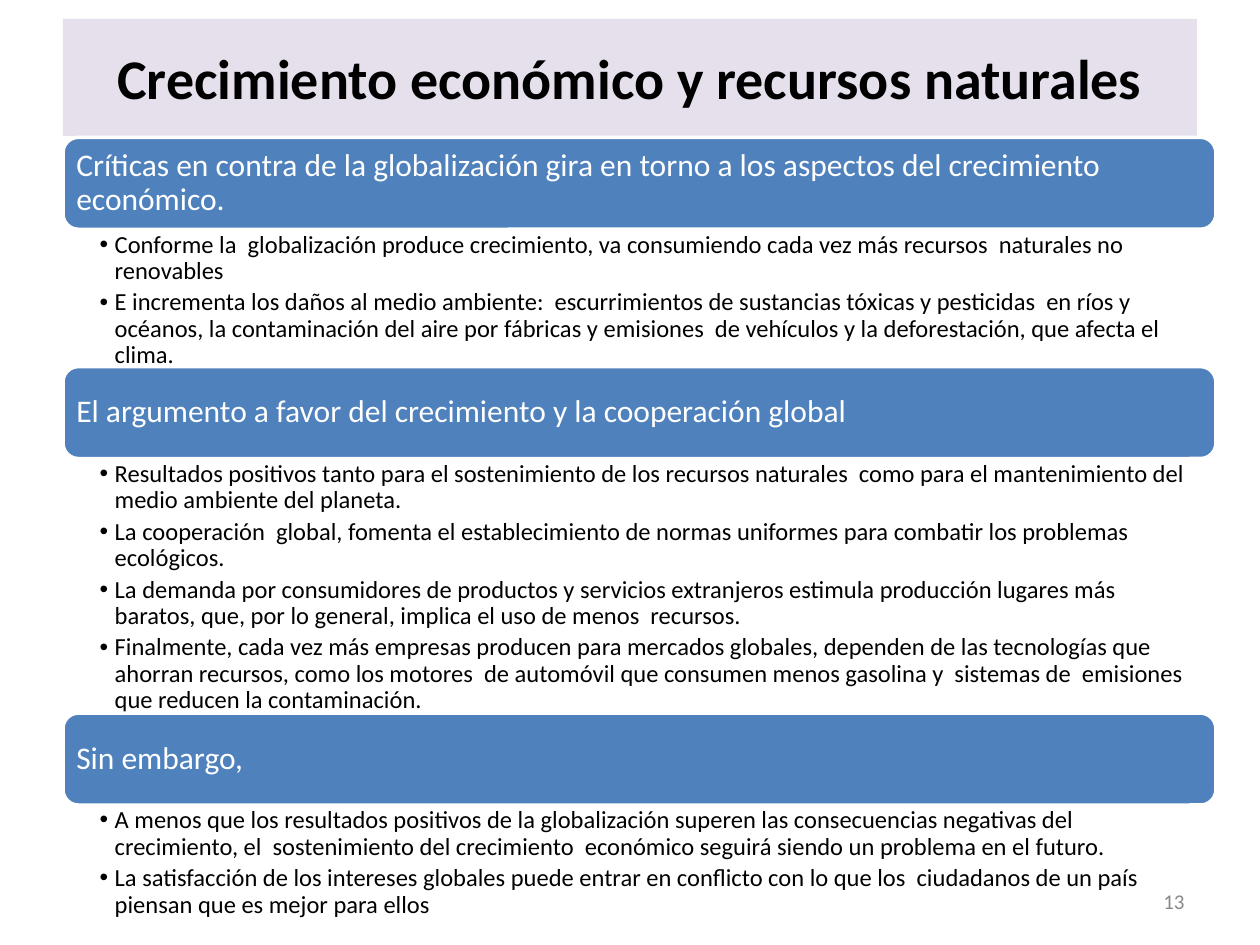
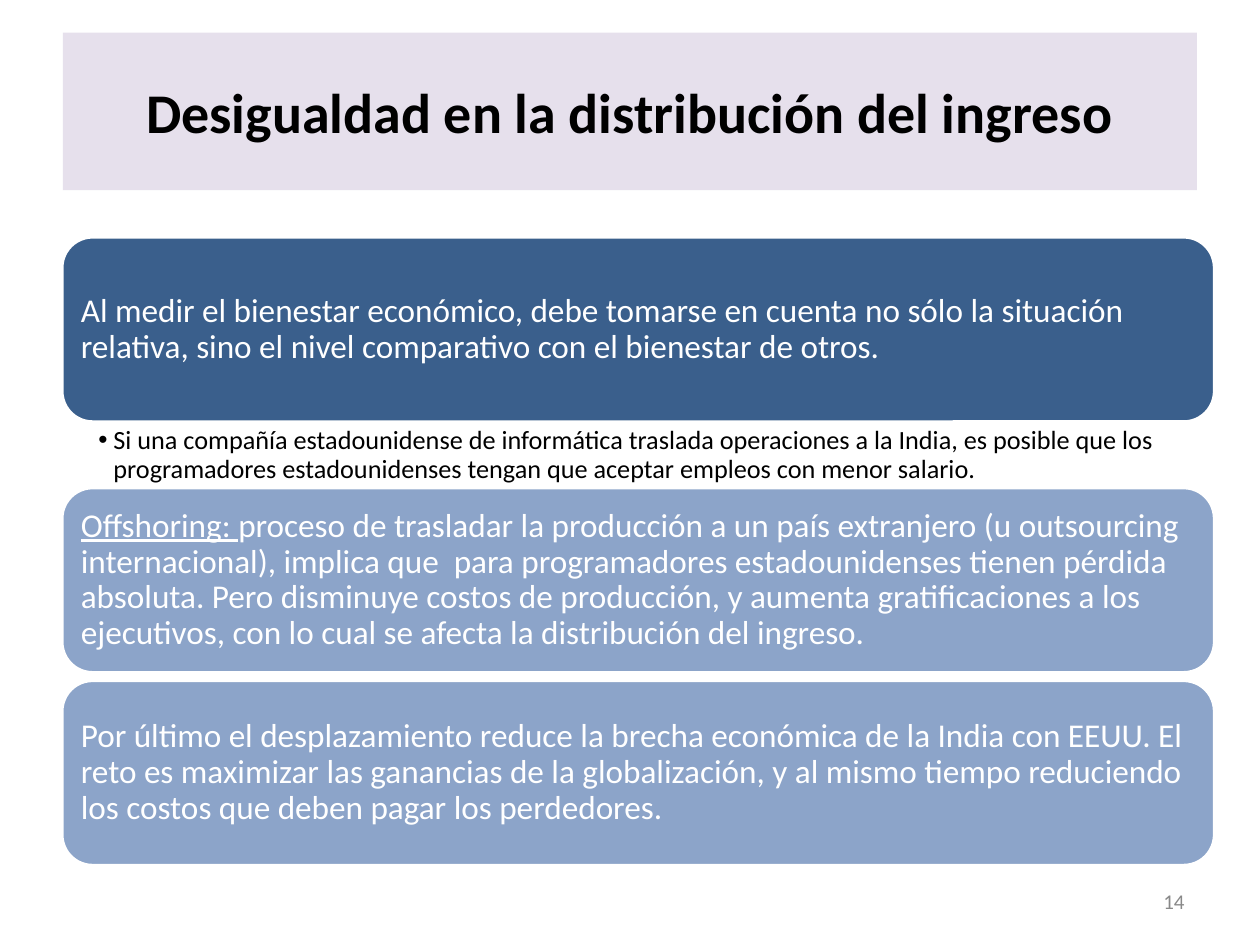
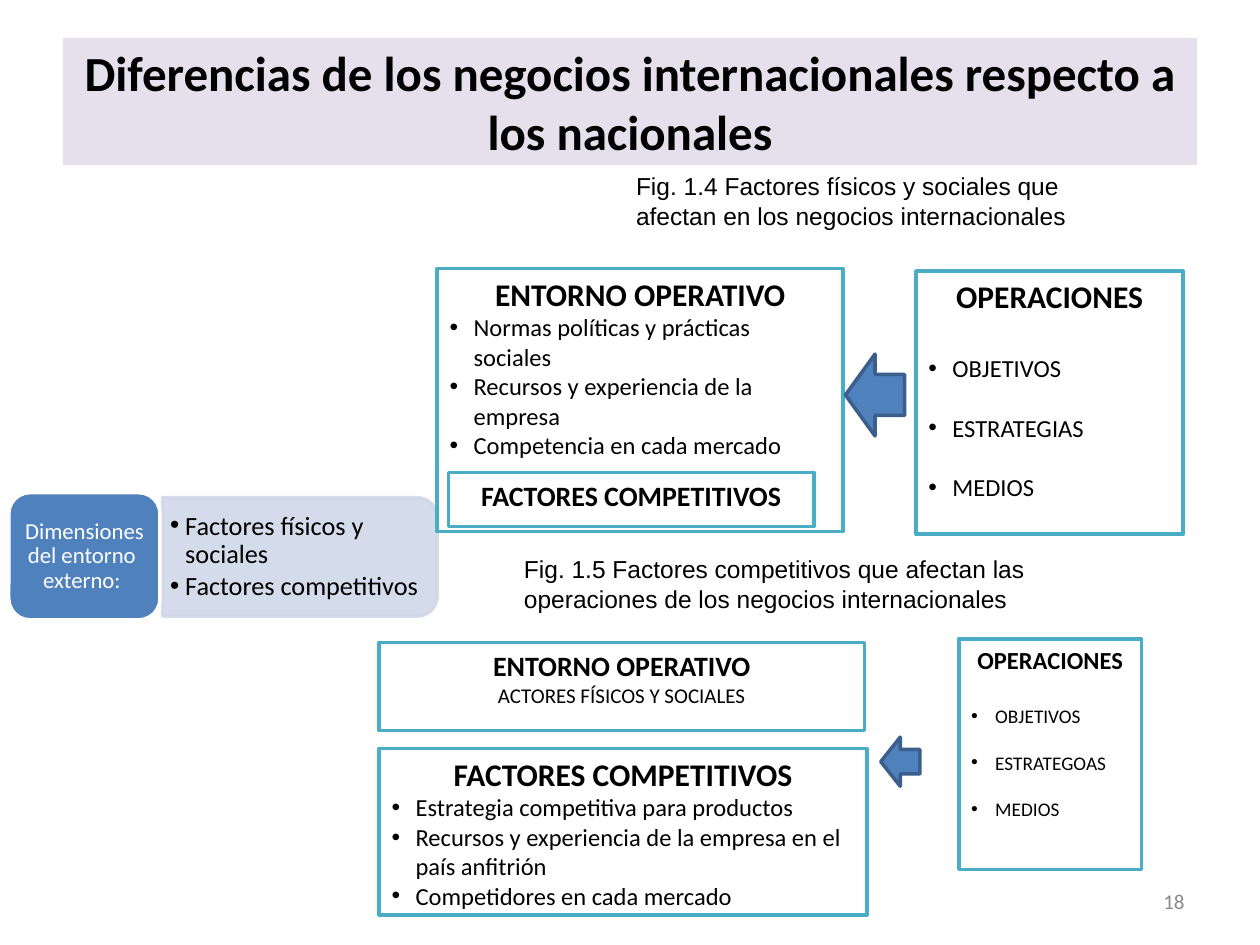
from dataclasses import dataclass, replace
from math import cos, pi, sin

from lxml.etree import SubElement
from pptx import Presentation
from pptx.dml.color import RGBColor
from pptx.enum.shapes import MSO_SHAPE as Shape
from pptx.enum.text import MSO_ANCHOR as Anchor, PP_ALIGN as Align
from pptx.oxml.ns import qn
from pptx.util import Inches, Pt

BLACK, WHITE, GREY = "000000", "FFFFFF", "898989"
LILAC, BLUE, DARK_BLUE = "E6E0EC", "4F81BD", "3A5F8C"
SOFT_BLUE, PALE_BLUE, TEAL = "8CA4C9", "D0D8E8", "4BACC6"
DEFAULT_INSETS = (0.1, 0.05, 0.1, 0.05)
LINE_HEIGHT = 1.22


def rgb(color):
    return RGBColor.from_string(color)


@dataclass
class TextStyle:
    size: float
    color: str = BLACK
    font: str = "Calibri"
    bold: bool = False
    align: Align = Align.LEFT
    indent: float = 0
    spacing: float = 1
    before: float = 0
    after: float = 0


def band_text(size):
    return TextStyle(size, WHITE, spacing=0.9)


def body_text(size, after=0.2):
    return TextStyle(size, indent=0.12, spacing=0.9, after=size * after)


def heading(size):
    return TextStyle(size, bold=True, align=Align.CENTER)


def bullet(size, before=0):
    return TextStyle(size, indent=0.19, before=before)


def hang_bullet(paragraph, indent):
    properties = paragraph._p.get_or_add_pPr()
    properties.set("marL", str(Inches(indent)))
    properties.set("indent", str(-Inches(indent)))
    SubElement(properties, qn("a:buFont"), typeface="Arial")
    SubElement(properties, qn("a:buChar"), char="•")


class Deck:
    """Holds the shared style and the slide being filled."""

    def __init__(self):
        self.presentation = Presentation()
        self.presentation.slide_width = Inches(10)
        self.presentation.slide_height = Inches(7.5)
        self.slide = None

    def start_slide(self, title, number, top, height, size=32):
        self.slide = self.presentation.slides.add_slide(self.presentation.slide_layouts[6])
        banner = self.shape(Shape.RECTANGLE, (0.5, top, 9, height), LILAC)
        self.set_text(banner, [(title, heading(size))], Anchor.MIDDLE)
        self.text_box((7.17, 6.95, 2.33, 0.4),
                      [(number, TextStyle(12, GREY, align=Align.RIGHT))], Anchor.MIDDLE)

    def paint(self, shape, fill=None, line=None):
        shape.shadow.inherit = False
        if fill:
            shape.fill.solid()
            shape.fill.fore_color.rgb = rgb(fill)
        else:
            shape.fill.background()
        if line:
            shape.line.color.rgb = rgb(line)
            shape.line.width = Pt(2)
        else:
            shape.line.fill.background()

    def shape(self, kind, box, fill=None, line=None):
        shape = self.slide.shapes.add_shape(kind, *map(Inches, box))
        self.paint(shape, fill, line)
        return shape

    def set_text(self, shape, lines, anchor=Anchor.TOP, insets=DEFAULT_INSETS, lead=""):
        """Fill in (text, style) pairs; lead is underlined before the first text."""
        frame = shape.text_frame
        frame.word_wrap = True
        frame.vertical_anchor = anchor
        (frame.margin_left, frame.margin_top,
         frame.margin_right, frame.margin_bottom) = map(Inches, insets)
        for index, (text, style) in enumerate(lines):
            paragraph = frame.add_paragraph() if index else frame.paragraphs[0]
            if lead and not index:
                paragraph.text = lead
                paragraph.runs[0].font.underline = True
                paragraph.add_run().text = text
            else:
                paragraph.text = text
            paragraph.alignment = style.align
            paragraph.line_spacing = style.spacing
            paragraph.space_before = Pt(style.before)
            paragraph.space_after = Pt(style.after)
            if style.indent:
                hang_bullet(paragraph, style.indent)
            for run in paragraph.runs:
                run.font.name = style.font
                run.font.size = Pt(style.size)
                run.font.bold = style.bold
                run.font.color.rgb = rgb(style.color)

    def text_box(self, box, lines, anchor=Anchor.TOP, insets=DEFAULT_INSETS):
        self.set_text(self.slide.shapes.add_textbox(*map(Inches, box)), lines, anchor, insets)

    def band(self, box, text, style, inset, fill=BLUE, lead=""):
        band = self.shape(Shape.ROUNDED_RECTANGLE, box, fill, WHITE)
        self.set_text(band, [(text, style)], Anchor.MIDDLE, (inset,) * 4, lead)

    def frame(self, box, lines):
        self.set_text(self.shape(Shape.RECTANGLE, box, line=TEAL), lines)

    def arrow(self, box):
        self.shape(Shape.LEFT_ARROW, box, BLUE, DARK_BLUE)

    def tab(self, box, radius, lines):
        """Draw a translucent panel whose right corners alone are rounded."""
        left, top, width, height = box
        right, bottom = left + width, top + height
        angles = [pi / 2 * step / 12 for step in range(13)]
        upper = [(right - radius + radius * sin(a), top + radius - radius * cos(a)) for a in angles]
        lower = [(x, top + bottom - y) for x, y in reversed(upper)]
        points = [(Inches(x), Inches(y)) for x, y in upper + lower + [(left, bottom)]]
        builder = self.slide.shapes.build_freeform(Inches(left), Inches(top))
        builder.add_line_segments(points, close=True)
        panel = builder.convert_to_shape()
        self.paint(panel, PALE_BLUE, PALE_BLUE)
        for color in panel._element.spPr.iter(qn("a:srgbClr")):
            SubElement(color, qn("a:alpha"), val="90000")
        self.set_text(panel, lines, Anchor.MIDDLE, (0.06, 0.08, 0.11, 0.08))


def growth_slide(deck):
    deck.start_slide("Crecimiento económico y recursos naturales", "13", 0.15, 0.93)
    sections = [
        (1.09, 1.09,
         "Críticas en contra de la globalización gira en torno a los aspectos del crecimiento económico.",
         ["Conforme la  globalización produce crecimiento, va consumiendo cada vez más recursos  "
          "naturales no renovables",
          "E incrementa los daños al medio ambiente:  escurrimientos de sustancias tóxicas y "
          "pesticidas  en ríos y océanos, la contaminación del aire por fábricas y emisiones  de "
          "vehículos y la deforestación, que afecta el clima."]),
        (2.91, 2, "El argumento a favor del crecimiento y la cooperación global",
         ["Resultados positivos tanto para el sostenimiento de los recursos naturales  como para "
          "el mantenimiento del medio ambiente del planeta.",
          "La cooperación  global, fomenta el establecimiento de normas uniformes para combatir "
          "los problemas ecológicos.",
          "La demanda por consumidores de productos y servicios extranjeros estimula producción "
          "lugares más baratos, que, por lo general, implica el uso de menos  recursos.",
          "Finalmente, cada vez más empresas producen para mercados globales, dependen de las "
          "tecnologías que ahorran recursos, como los motores  de automóvil que consumen menos "
          "gasolina y  sistemas de  emisiones que reducen la contaminación."]),
        (5.66, 0.89, "Sin embargo,",
         ["A menos que los resultados positivos de la globalización superen las consecuencias "
          "negativas del crecimiento, el  sostenimiento del crecimiento  económico seguirá siendo "
          "un problema en el futuro.",
          "La satisfacción de los intereses globales puede entrar en conflicto con lo que los  "
          "ciudadanos de un país piensan que es mejor para ellos"]),
    ]
    band_height = 0.73
    for top, body_height, claim, details in sections:
        deck.band((0.5, top, 9.15, band_height), claim, band_text(18), 0.07)
        deck.text_box((0.5, top + band_height, 9.15, body_height),
                      [(detail, body_text(14)) for detail in details],
                      insets=(0.29, 0.02, 0.11, 0.02))


def inequality_slide(deck):
    deck.start_slide("Desigualdad en la distribución del ingreso", "14", 0.26, 1.25)
    bands = [
        (1.88, DARK_BLUE, "",
         "Al medir el bienestar económico, debe tomarse en cuenta no sólo la situación relativa, "
         "sino el nivel comparativo con el bienestar de otros."),
        (3.87, SOFT_BLUE, "Offshoring: ",
         "proceso de trasladar la producción a un país extranjero (u outsourcing internacional), "
         "implica que  para programadores estadounidenses tienen pérdida absoluta. Pero disminuye "
         "costos de producción, y aumenta gratificaciones a los ejecutivos, con lo cual se afecta "
         "la distribución del ingreso."),
        (5.4, SOFT_BLUE, "",
         "Por último el desplazamiento reduce la brecha económica de la India con EEUU. El reto es "
         "maximizar las ganancias de la globalización, y al mismo tiempo reduciendo los costos que "
         "deben pagar los perdedores."),
    ]
    for top, fill, lead, text in bands:
        deck.band((0.49, top, 9.15, 1.47), text, band_text(19), 0.08, fill, lead)
    example = ("Si una compañía estadounidense de informática traslada operaciones a la India, es "
               "posible que los programadores estadounidenses tengan que aceptar empleos con menor "
               "salario.")
    deck.text_box((0.49, 3.36, 9.15, 0.52), [(example, body_text(15))],
                  insets=(0.29, 0.03, 0.15, 0.03))


def operations_lines(heading_size, size, items):
    """Heading and bullets, each bullet one line below the text above it."""
    gaps = [heading_size] + [size] * (len(items) - 1)
    return [("OPERACIONES", heading(heading_size))] + [
        (item, bullet(size, gap * LINE_HEIGHT)) for item, gap in zip(items, gaps)]


def differences_slide(deck):
    deck.start_slide("Diferencias de los negocios internacionales respecto a los nacionales",
                     "18", 0.3, 1.01, 28)
    deck.tab((1.29, 3.95, 2.18, 0.94), 0.16,
             [(factor, body_text(15, 0.15))
              for factor in ("Factores físicos y sociales", "Factores competitivos")])
    deck.band((0.07, 3.91, 1.2, 1.01), "Dimensiones del entorno  externo: ",
              replace(band_text(13), align=Align.CENTER), 0.06)

    deck.frame((3.47, 2.13, 3.22, 2.09), [
        ("ENTORNO OPERATIVO", heading(18)),
        ("Normas políticas y prácticas sociales", bullet(14)),
        ("Recursos y experiencia de la empresa", bullet(14)),
        ("Competencia en cada mercado", bullet(14))])
    deck.frame((3.56, 3.75, 2.9, 0.43), [("FACTORES COMPETITIVOS", heading(16))])
    deck.frame((7.27, 2.15, 2.12, 2.09),
               operations_lines(18, 14, ["OBJETIVOS", "ESTRATEGIAS", "MEDIOS"]))
    deck.arrow((6.71, 2.81, 0.47, 0.65))

    deck.frame((3.01, 5.1, 3.85, 0.7), [
        ("ENTORNO OPERATIVO", heading(16)),
        ("ACTORES FÍSICOS Y SOCIALES", TextStyle(12, align=Align.CENTER))])
    deck.frame((3.01, 5.94, 3.87, 1.32), [
        ("FACTORES COMPETITIVOS", heading(18)),
        ("Estrategia competitiva para productos", bullet(14)),
        ("Recursos y experiencia de la empresa en el país anfitrión", bullet(14)),
        ("Competidores en cada mercado", bullet(14))])
    deck.frame((7.61, 5.07, 1.45, 1.83),
               operations_lines(14, 11, ["OBJETIVOS", "ESTRATEGOAS", "MEDIOS"]))
    deck.arrow((6.99, 5.85, 0.31, 0.39))

    captions = [
        ((4.95, 1.31, 3.87, 0.57),
         "Fig. 1.4 Factores físicos y sociales que afectan en los negocios internacionales"),
        ((4.06, 4.35, 4.25, 0.57),
         "Fig. 1.5 Factores competitivos que afectan las operaciones de los negocios "
         "internacionales"),
    ]
    for box, caption in captions:
        deck.text_box(box, [(caption, TextStyle(14, font="Arial"))])


def main():
    deck = Deck()
    growth_slide(deck)
    inequality_slide(deck)
    differences_slide(deck)
    deck.presentation.save("out.pptx")


if __name__ == "__main__":
    main()
